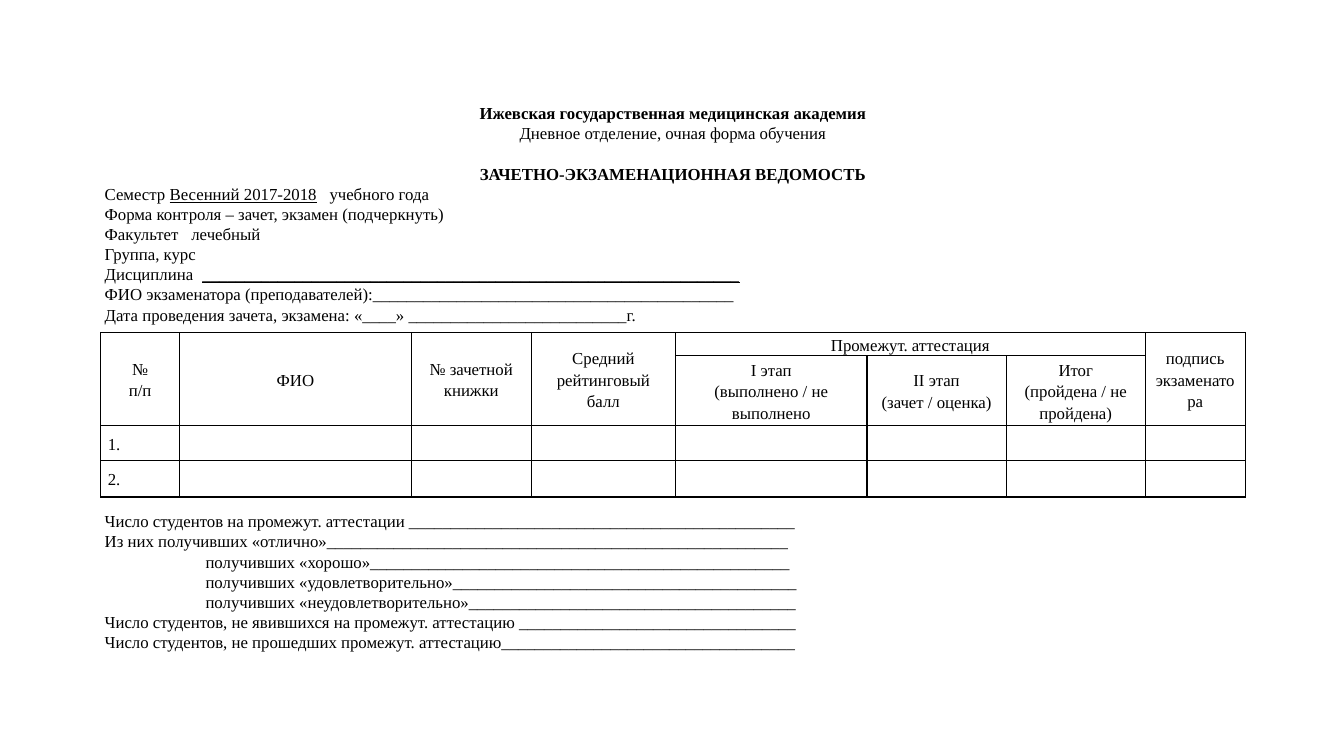
from lxml import etree
from pptx import Presentation
from pptx.dml.color import RGBColor
from pptx.enum.text import MSO_ANCHOR, PP_ALIGN
from pptx.oxml.ns import qn
from pptx.util import Inches, Pt

CENTER, LEFT = PP_ALIGN.CENTER, PP_ALIGN.LEFT
MIDDLE = MSO_ANCHOR.MIDDLE
COLORS = {"ink": "000000"}
FONT, SIZE = "Times New Roman", 12

PLAIN, BOLD, UNDERLINE = "plain", "bold", "underline"

HEADINGS = [
    ("Ижевская государственная медицинская академия", BOLD, 0),
    ("Дневное отделение, очная форма обучения", PLAIN, 0),
    ("ЗАЧЕТНО-ЭКЗАМЕНАЦИОННАЯ ВЕДОМОСТЬ", BOLD, 14.4),
]
DETAILS = [
    ([("Семестр ", PLAIN), ("Весенний 2017-2018", UNDERLINE), ("\tучебного года", PLAIN)], 2.23),
    ([("Форма контроля – зачет, экзамен (подчеркнуть)", PLAIN)], None),
    ([("Факультет\tлечебный", PLAIN)], 0.86),
    ([("Группа, курс", PLAIN)], None),
    ([("Дисциплина\t", PLAIN), ("_" * 64, UNDERLINE)], 0.97),
    ([("ФИО экзаменатора (преподавателей):" + "_" * 43, PLAIN)], None),
    ([("Дата проведения зачета, экзамена: «____» " + "_" * 26 + "г.", PLAIN)], None),
]
TOTALS = [
    ("Число студентов на промежут. аттестации ", 46),
    ("Из них получивших «отлично»", 55),
    ("\tполучивших «хорошо»", 50),
    ("\tполучивших «удовлетворительно»", 41),
    ("\tполучивших «неудовлетворительно»", 39),
    ("Число студентов, не явившихся на промежут. аттестацию ", 33),
    ("Число студентов, не прошедших промежут. аттестацию", 35),
]
TOTALS_TAB = 1.0

COLUMN_WIDTHS = [0.78, 2.3, 1.19, 1.43, 1.9, 1.38, 1.38, 0.99]
ROW_HEIGHTS = [0.23, 0.69, 0.35, 0.36]
TABLE_ROWS = [
    ["№\nп/п", "ФИО", "№ зачетной книжки", "Средний рейтинговый балл",
     "Промежут. аттестация", "", "", "подпись экзаменатора"],
    ["", "", "", "", "I этап\n(выполнено / не выполнено",
     "II этап\n(зачет / оценка)", "Итог\n(пройдена / не пройдена)", ""],
    ["1.", "", "", "", "", "", "", ""],
    ["2.", "", "", "", "", "", "", ""],
]
HEADER_ROWS = 2
TALL_COLUMNS = [0, 1, 2, 3, 7]
STAGE_COLUMNS = (4, 6)


def style_run(run, style=PLAIN):
    run.font.name = FONT
    run.font.size = Pt(SIZE)
    run.font.bold = style == BOLD
    run.font.underline = style == UNDERLINE
    run.font.color.rgb = RGBColor.from_string(COLORS["ink"])


def add_tab(paragraph, position):
    properties = paragraph._p.get_or_add_pPr()
    tabs = etree.SubElement(properties, qn("a:tabLst"))
    etree.SubElement(tabs, qn("a:tab"), pos=str(Inches(position)), algn="l")


def add_text_box(slide, top, height, paragraphs):
    box = slide.shapes.add_textbox(Inches(0.94), Inches(top), Inches(11.47), Inches(height))
    frame = box.text_frame
    frame.word_wrap = True
    for index, (runs, alignment, space_before, tab) in enumerate(paragraphs):
        paragraph = frame.paragraphs[0] if index == 0 else frame.add_paragraph()
        paragraph.alignment = alignment
        if space_before:
            paragraph.space_before = Pt(space_before)
        if tab:
            add_tab(paragraph, tab)
        for text, style in runs:
            run = paragraph.add_run()
            run.text = text
            style_run(run, style)


def add_borders(cell):
    properties = cell._tc.get_or_add_tcPr()
    for side in ("lnL", "lnR", "lnT", "lnB"):
        line = etree.SubElement(properties, qn(f"a:{side}"), w=str(Pt(1)))
        fill = etree.SubElement(line, qn("a:solidFill"))
        etree.SubElement(fill, qn("a:srgbClr"), val=COLORS["ink"])


def add_grade_table(slide):
    table = slide.shapes.add_table(
        len(ROW_HEIGHTS), len(COLUMN_WIDTHS), Inches(1), Inches(3.3),
        Inches(sum(COLUMN_WIDTHS)), Inches(sum(ROW_HEIGHTS))).table
    table.first_row = False
    table.horz_banding = False
    for column, width in zip(table.columns, COLUMN_WIDTHS):
        column.width = Inches(width)
    for row, height in zip(table.rows, ROW_HEIGHTS):
        row.height = Inches(height)
    for row_index, texts in enumerate(TABLE_ROWS):
        for column_index, text in enumerate(texts):
            cell = table.cell(row_index, column_index)
            add_borders(cell)
            cell.fill.background()
            cell.vertical_anchor = MIDDLE
            cell.margin_left = cell.margin_right = Inches(0.07)
            cell.margin_top = cell.margin_bottom = 0
            cell.text_frame.text = text
            for paragraph in cell.text_frame.paragraphs:
                paragraph.alignment = CENTER if row_index < HEADER_ROWS else LEFT
                paragraph.line_spacing = 1.15
                paragraph.font.size = Pt(SIZE)
                for run in paragraph.runs:
                    style_run(run)
    for column in TALL_COLUMNS:
        table.cell(0, column).merge(table.cell(HEADER_ROWS - 1, column))
    first_stage, last_stage = STAGE_COLUMNS
    table.cell(0, first_stage).merge(table.cell(0, last_stage))


def main():
    presentation = Presentation()
    presentation.slide_width = Inches(13.33)
    presentation.slide_height = Inches(7.5)
    slide = presentation.slides.add_slide(presentation.slide_layouts[6])

    headings = [([(text, style)], CENTER, space, None) for text, style, space in HEADINGS]
    details = [(runs, LEFT, 0, tab) for runs, tab in DETAILS]
    totals = [([(label + "_" * count, PLAIN)], LEFT, 0,
               TOTALS_TAB if label.startswith("\t") else None) for label, count in TOTALS]

    add_text_box(slide, 0.97, 2.32, headings + details)
    add_grade_table(slide)
    add_text_box(slide, 5.02, 1.51, totals)
    presentation.save("out.pptx")


if __name__ == "__main__":
    main()
